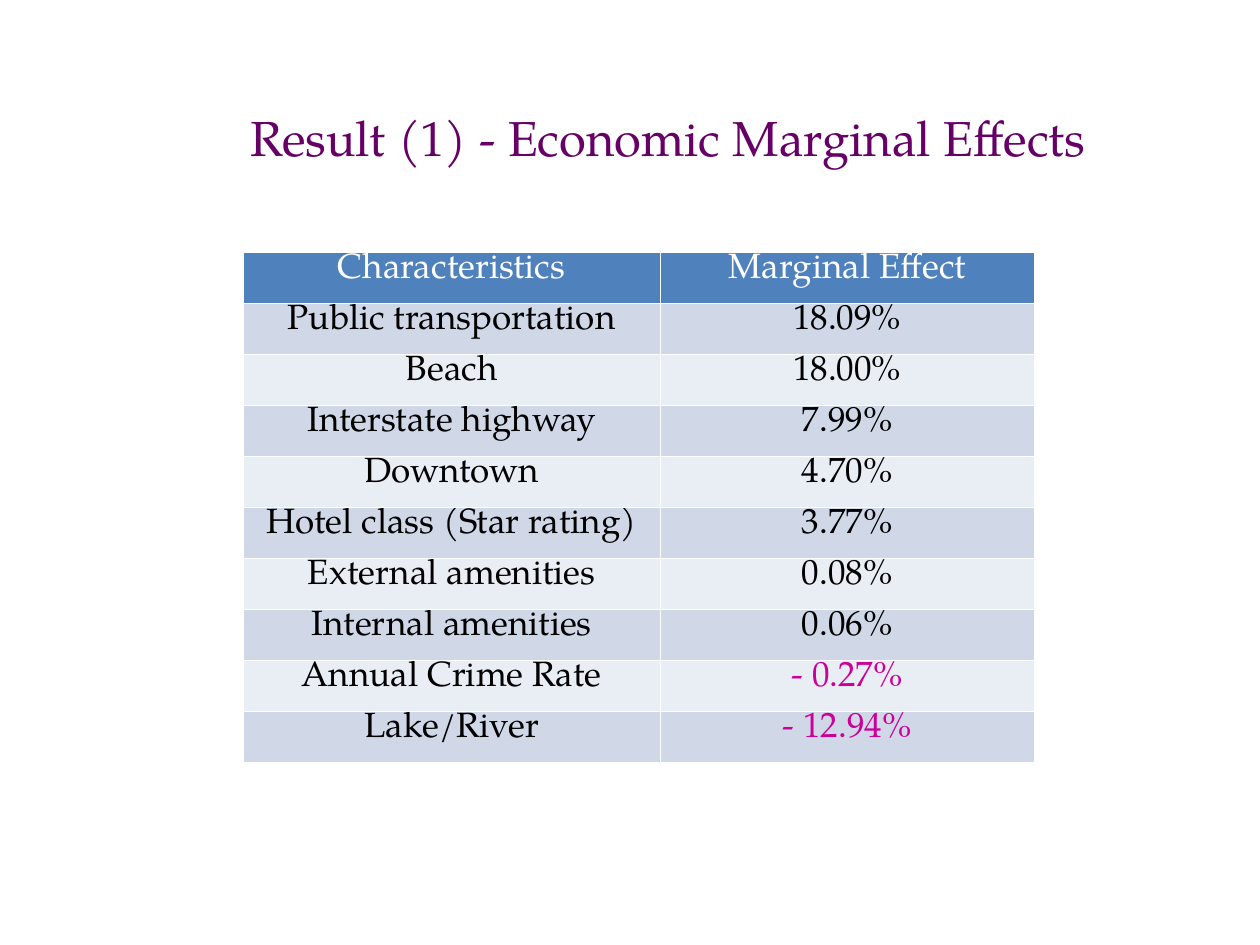
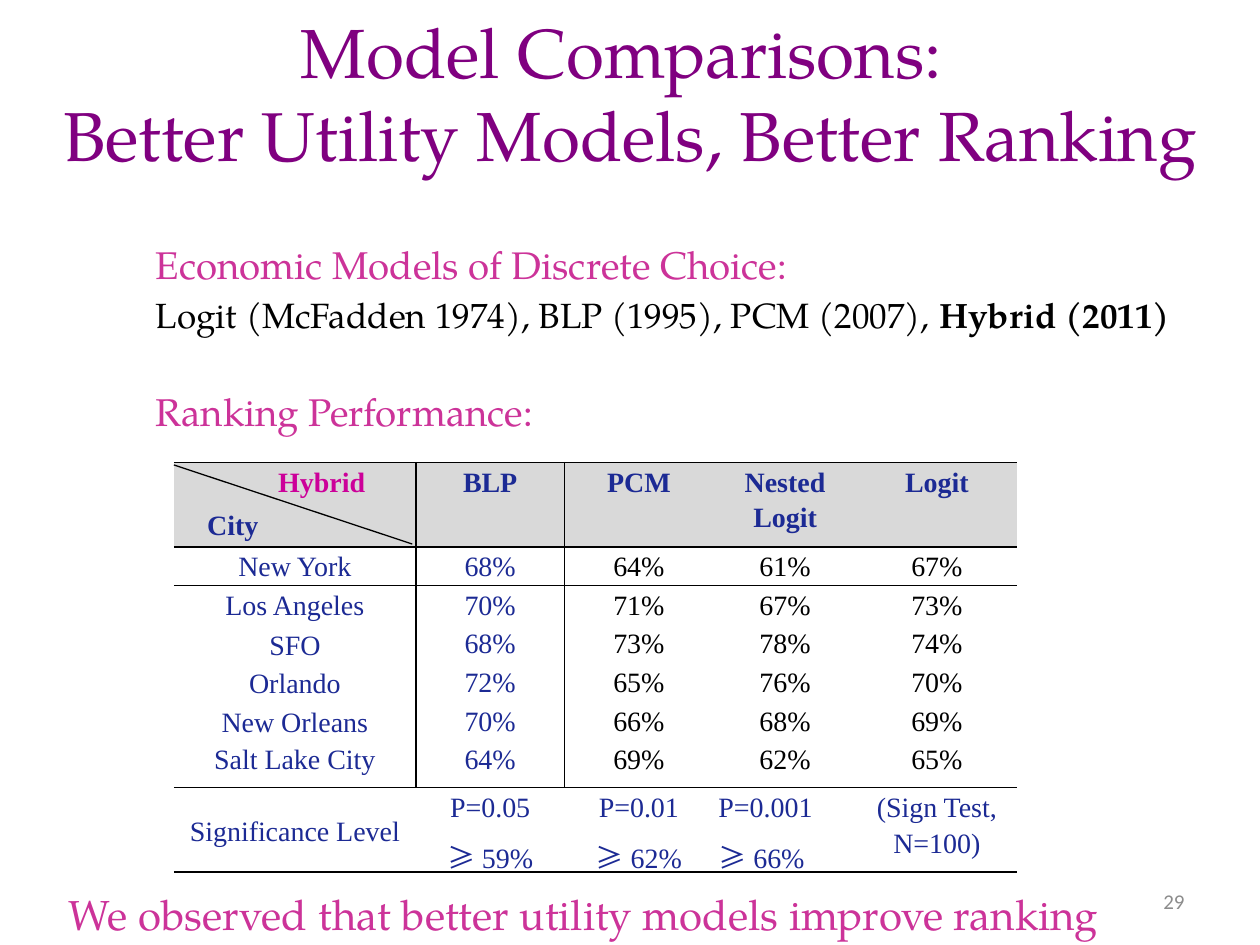
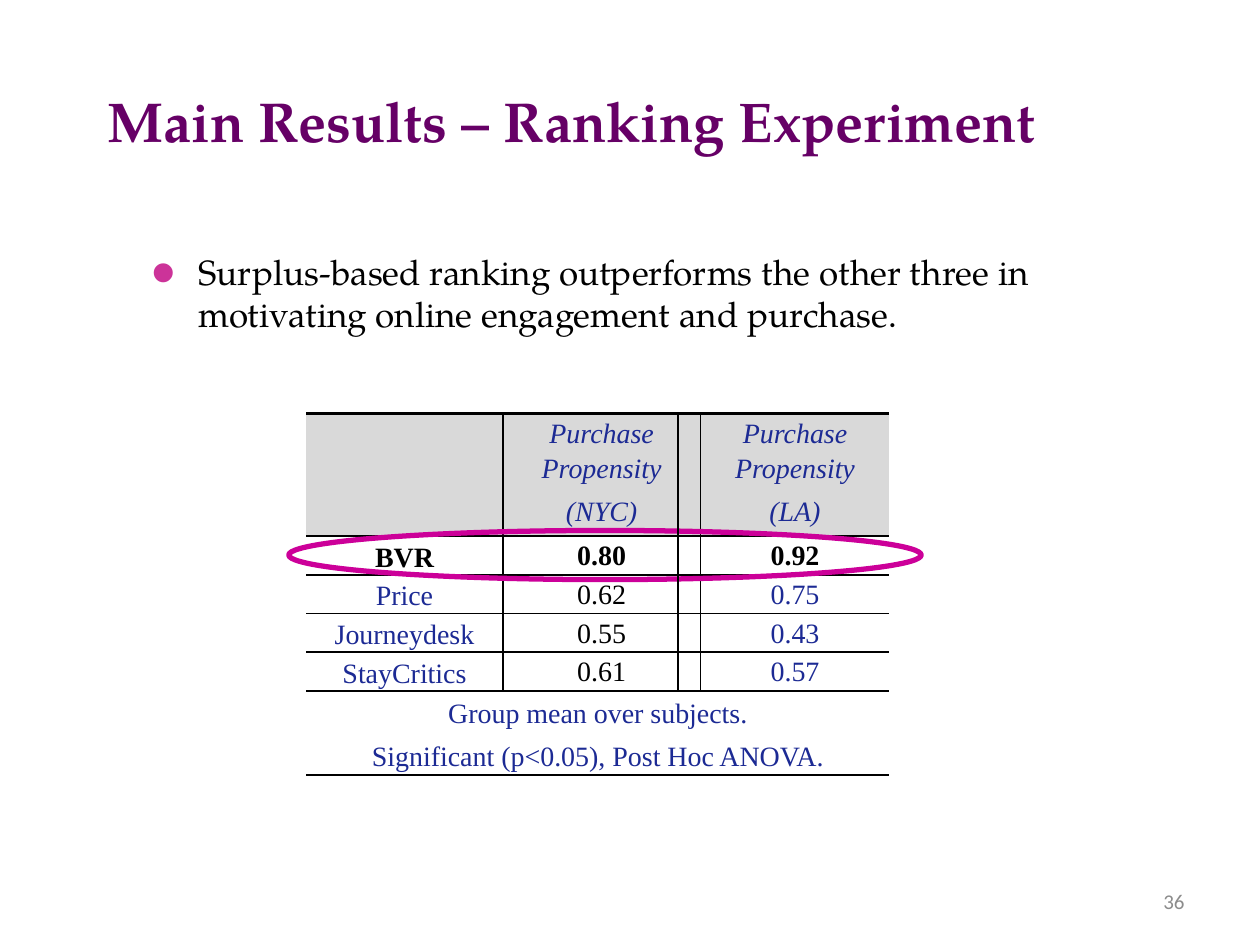
import pptx
import pptx.dml.color
import pptx.enum.shapes
import pptx.enum.text
import pptx.oxml
import pptx.oxml.ns
import pptx.util

Pt = pptx.util.Pt
RGB = pptx.dml.color.RGBColor
ALIGN = pptx.enum.text.PP_ALIGN
ANCHOR = pptx.enum.text.MSO_ANCHOR
qn = pptx.oxml.ns.qn

PLUM = RGB(0x66, 0x00, 0x66)
PURPLE = RGB(0x80, 0x00, 0x80)
PINK = RGB(0xCC, 0x33, 0x99)
MAGENTA = RGB(0xCC, 0x00, 0x99)
NAVY = RGB(0x1C, 0x2A, 0x94)
BLACK = RGB(0x00, 0x00, 0x00)
WHITE = RGB(0xFF, 0xFF, 0xFF)
BLUE = RGB(0x4F, 0x81, 0xBD)
BAND_DARK = RGB(0xD0, 0xD8, 0xE8)
BAND_LIGHT = RGB(0xE9, 0xED, 0xF4)
GREY = RGB(0xD9, 0xD9, 0xD9)
NUMBER_GREY = RGB(0x8C, 0x8C, 0x8C)

SERIF = "TeX Gyre Pagella"
TIMES = "Times New Roman"
CJK = "Noto Sans CJK SC"
SANS = "Calibri"
PLAIN_TABLE = "{2D5ABB26-0587-4C30-8999-92F81FD0307C}"
TIMES_FORMAT = dict(size=16, font=TIMES, line=1.15, before=2, after=2)

EFFECTS = [
    ("Characteristics", "Marginal Effect"),
    ("Public transportation", "18.09%"),
    ("Beach", "18.00%"),
    ("Interstate highway", "7.99%"),
    ("Downtown", "4.70%"),
    ("Hotel class (Star rating)", "3.77%"),
    ("External amenities", "0.08%"),
    ("Internal amenities", "0.06%"),
    ("Annual Crime Rate", "- 0.27%"),
    ("Lake/River", "- 12.94%"),
]
RANKING = [
    ("", "BLP", "PCM", "Nested Logit", "Logit"),
    ("New York", "68%", "64%", "61%", "67%"),
    ("Los Angeles", "70%", "71%", "67%", "73%"),
    ("SFO", "68%", "73%", "78%", "74%"),
    ("Orlando", "72%", "65%", "76%", "70%"),
    ("New Orleans", "70%", "66%", "68%", "69%"),
    ("Salt Lake City", "64%", "69%", "62%", "65%"),
    ("Significance Level", "P=0.05\n≥ 59%", "P=0.01\n≥ 62%", "P=0.001\n≥ 66%",
     "(Sign Test, N=100)"),
]
PROPENSITY = [
    ("", "Purchase Propensity\n(NYC)", "Purchase Propensity\n(LA)"),
    ("BVR", "0.80", "0.92"),
    ("Price", "0.62", "0.75"),
    ("Journeydesk", "0.55", "0.43"),
    ("StayCritics", "0.61", "0.57"),
    ("Group mean over subjects.\nSignificant (p<0.05), Post Hoc ANOVA.", "", ""),
]


def add_run(p, text, size=20, color=BLACK, font=SERIF, bold=False, italic=False):
    for i, part in enumerate(text.split("\n")):
        if i:
            p.add_line_break()
        r = p.add_run()
        r.text = part
        f = r.font
        f.size, f.name, f.bold, f.italic = Pt(size), font, bold, italic
        f.color.rgb = color


def add_par(tf, text, align=ALIGN.LEFT, line=None, before=0, after=0, indent=0, **fmt):
    p = tf.add_paragraph() if tf.text else tf.paragraphs[0]
    p.alignment = align
    p.space_before, p.space_after = Pt(before), Pt(after)
    if line:
        p.line_spacing = line
    if indent:
        p._p.get_or_add_pPr().set("marL", str(Pt(indent)))
    if text.startswith("≥"):
        add_run(p, "≥", **{**fmt, "font": CJK})
        text = text[1:]
    add_run(p, text, **fmt)
    return p


def place(sp, box):
    sp.left, sp.top, sp.width, sp.height = (Pt(v) for v in box)


def add_title(sl, box, text, size, color, bold=False):
    sp = sl.shapes.title
    place(sp, box)
    tf = sp.text_frame
    tf.auto_size = pptx.enum.text.MSO_AUTO_SIZE.NONE
    tf.vertical_anchor = ANCHOR.MIDDLE
    add_par(tf, text, ALIGN.CENTER, size=size, color=color, bold=bold)


def add_box(sl, box, anchor=ANCHOR.TOP):
    tf = sl.shapes.add_textbox(*(Pt(v) for v in box)).text_frame
    tf.word_wrap = True
    tf.vertical_anchor = anchor
    return tf


def add_page_number(sl, number):
    tf = add_box(sl, (516, 500.4, 168, 28.8), ANCHOR.MIDDLE)
    add_par(tf, number, ALIGN.RIGHT, size=12, color=NUMBER_GREY, font=SANS)


def add_line(sl, x1, y1, x2, y2, width):
    cn = sl.shapes.add_connector(pptx.enum.shapes.MSO_CONNECTOR.STRAIGHT,
                                 Pt(x1), Pt(y1), Pt(x2), Pt(y2))
    cn.line.color.rgb = BLACK
    cn.line.width = Pt(width)
    cn._element.spPr.append(pptx.oxml.parse_xml(
        '<a:effectLst xmlns:a="http://schemas.openxmlformats.org/drawingml/2006/main"/>'))


def add_grid(sl, left, top, cols, rows):
    gf = sl.shapes.add_table(len(rows), len(cols), Pt(left), Pt(top),
                             Pt(sum(cols)), Pt(sum(rows)))
    tbl = gf.table
    tbl._tbl.tblPr.find(qn("a:tableStyleId")).text = PLAIN_TABLE
    for col, width in zip(tbl.columns, cols):
        col.width = Pt(width)
    for row, height in zip(tbl.rows, rows):
        row.height = Pt(height)
    return tbl


def format_cell(cell, fill, edges, color, margin, anchor=ANCHOR.TOP):
    cell.margin_left = cell.margin_right = Pt(margin)
    cell.margin_top = cell.margin_bottom = 0
    cell.vertical_anchor = anchor
    if fill is None:
        cell.fill.background()
    else:
        cell.fill.solid()
        cell.fill.fore_color.rgb = fill
    sides = [side for side in "LRTB" if side in edges]
    for i, side in enumerate(sides):
        cell._tc.tcPr.insert(i, pptx.oxml.parse_xml(
            f'<a:ln{side} xmlns:a="http://schemas.openxmlformats.org/drawingml/2006/main" '
            f'w="{Pt(edges[side])}"><a:solidFill><a:srgbClr val="{color}"/></a:solidFill>'
            f'</a:ln{side}>'))


def fill_cell(cell, text, **fmt):
    for part in text.split("\n"):
        add_par(cell.text_frame, part, **fmt)


def add_effects_table(sl, left, top):
    tbl = add_grid(sl, left, top, [238.3, 213.8], [29.16] * len(EFFECTS))
    for i, row in enumerate(EFFECTS):
        fill = BLUE if i == 0 else BAND_DARK if i % 2 else BAND_LIGHT
        for j, text in enumerate(row):
            cell = tbl.cell(i, j)
            format_cell(cell, fill, dict.fromkeys("LRTB", 1), WHITE, 7.2)
            color = WHITE if i == 0 else MAGENTA if text.startswith("-") else BLACK
            fill_cell(cell, text, align=ALIGN.CENTER, line=0.9, color=color)


def add_ranking_table(sl, left, top):
    cols = [138.2, 85, 85, 82.1, 91.4]
    last = len(RANKING) - 1
    header = 48
    tbl = add_grid(sl, left, top, cols, [header] + [22.1] * 5 + [27.2, 48])
    for i, row in enumerate(RANKING):
        for j, text in enumerate(row):
            cell = tbl.cell(i, j)
            edges = {}
            if i in (0, 1, last):
                edges["T"] = 1
            if i in (0, last - 1, last):
                edges["B"] = 1
            if i < last and j < 2:
                edges["RL"[j]] = 1
            middle = (j == 0 and i in (3, 4, 5)) or (i == last and j < 4)
            format_cell(cell, None if i else GREY, edges, BLACK, 3,
                        ANCHOR.MIDDLE if middle else ANCHOR.TOP)
            if text:
                fill_cell(cell, text,
                          align=ALIGN.LEFT if (i, j) == (last, 3) else ALIGN.CENTER,
                          color=BLACK if 0 < i < last and j > 1 else NAVY,
                          bold=i == 0, **TIMES_FORMAT)
    tf = tbl.cell(0, 0).text_frame
    add_par(tf, "Hybrid", indent=56.6, color=MAGENTA, bold=True, **TIMES_FORMAT)
    add_par(tf, "City", indent=16, color=NAVY, bold=True, **TIMES_FORMAT)
    add_line(sl, left, top + 1.4, left + cols[0] - 2, top + header - 1.4, 0.75)


def add_propensity_table(sl, left, top):
    header, height = 69.7, 20.5
    last = len(PROPENSITY) - 1
    tbl = add_grid(sl, left, top, [112.3, 113, 108],
                   [header] + [height] * (last - 1) + [47.4])
    for i, row in enumerate(PROPENSITY):
        for j, text in enumerate(row):
            cell = tbl.cell(i, j)
            edges = {"T": 1 if i else 1.5, "B": 1.5 if i == last else 1}
            if i < last and j < 2:
                edges["RL"[j]] = 1
            format_cell(cell, None if i else GREY, edges, BLACK, 5,
                        ANCHOR.MIDDLE if i and j == 0 else ANCHOR.TOP)
            if text:
                black = i == 1 or (1 < i < last and j == 1)
                fill_cell(cell, text, align=ALIGN.CENTER, color=BLACK if black else NAVY,
                          bold=i == 1, italic=i == 0, **TIMES_FORMAT)
    tbl.cell(last, 0).merge(tbl.cell(last, 2))

    sp = sl.shapes.add_shape(pptx.enum.shapes.MSO_SHAPE.OVAL, Pt(left - 10),
                             Pt(top + header - 2.8), Pt(361.4), Pt(28.1))
    sp.shadow.inherit = False
    sp.fill.background()
    sp.line.color.rgb = MAGENTA
    sp.line.width = Pt(3)
    add_line(sl, left + 212.4, top, left + 212.4, top + 158.4, 1)


def add_bullet(sp, box, text):
    place(sp, box)
    tf = sp.text_frame
    tf.auto_size = pptx.enum.text.MSO_AUTO_SIZE.NONE
    p = add_par(tf, text, before=4, indent=27)
    pPr = p._p.pPr
    pPr.set("indent", str(-Pt(27)))
    for tag, attrs in (("buSzPct", 'val="200000"'), ("buFont", 'typeface="Arial"'),
                       ("buChar", 'char="•"')):
        pPr.append(pptx.oxml.parse_xml(
            f'<a:{tag} xmlns:a="http://schemas.openxmlformats.org/drawingml/2006/main" {attrs}/>'))
    pPr.insert(pPr.index(pPr.find(qn("a:buSzPct"))), pptx.oxml.parse_xml(
        '<a:buClr xmlns:a="http://schemas.openxmlformats.org/drawingml/2006/main">'
        f'<a:srgbClr val="{PINK}"/></a:buClr>'))


def build_effects(prs):
    sl = prs.slides.add_slide(prs.slide_layouts[5])
    add_title(sl, (93.6, 54.7, 576, 47.5), "Result (1) - Economic Marginal Effects", 28, PLUM)
    add_effects_table(sl, 139, 144.4)


def build_comparisons(prs):
    sl = prs.slides.add_slide(prs.slide_layouts[5])
    add_title(sl, (0, 0, 720, 105.8),
              "Model Comparisons: \nBetter Utility Models, Better Ranking", 39.6, PURPLE)
    add_page_number(sl, "29")
    tf = add_box(sl, (82, 134, 595.4, 63.4))
    add_par(tf, "Economic Models of Discrete Choice:", size=22, color=PINK)
    p = add_par(tf, "Logit (McFadden 1974), BLP (1995), PCM (2007), ", before=4)
    add_run(p, "Hybrid (2011)", bold=True)
    add_par(add_box(sl, (82, 218.2, 595.4, 33.8)), "Ranking Performance:", size=22, color=PINK)
    add_ranking_table(sl, 99.4, 264.3)
    add_par(add_box(sl, (32, 504, 611.3, 36)),
            "We observed that better utility models improve ranking", size=24, color=PINK)


def build_experiment(prs):
    sl = prs.slides.add_slide(prs.slide_layouts[1])
    add_title(sl, (38.9, 43.2, 576, 50.4), "Main Results – Ranking Experiment", 32, PLUM, True)
    add_page_number(sl, "36")
    add_bullet(sl.placeholders[1], (79.2, 139.7, 592.6, 62.6),
               "Surplus-based ranking outperforms the other three in "
               "motivating online engagement and purchase.")
    add_propensity_table(sl, 175, 236.2)


def main():
    prs = pptx.Presentation()
    prs.slide_width, prs.slide_height = Pt(720), Pt(540)
    build_effects(prs)
    build_comparisons(prs)
    build_experiment(prs)
    prs.save("out.pptx")


if __name__ == "__main__":
    main()
